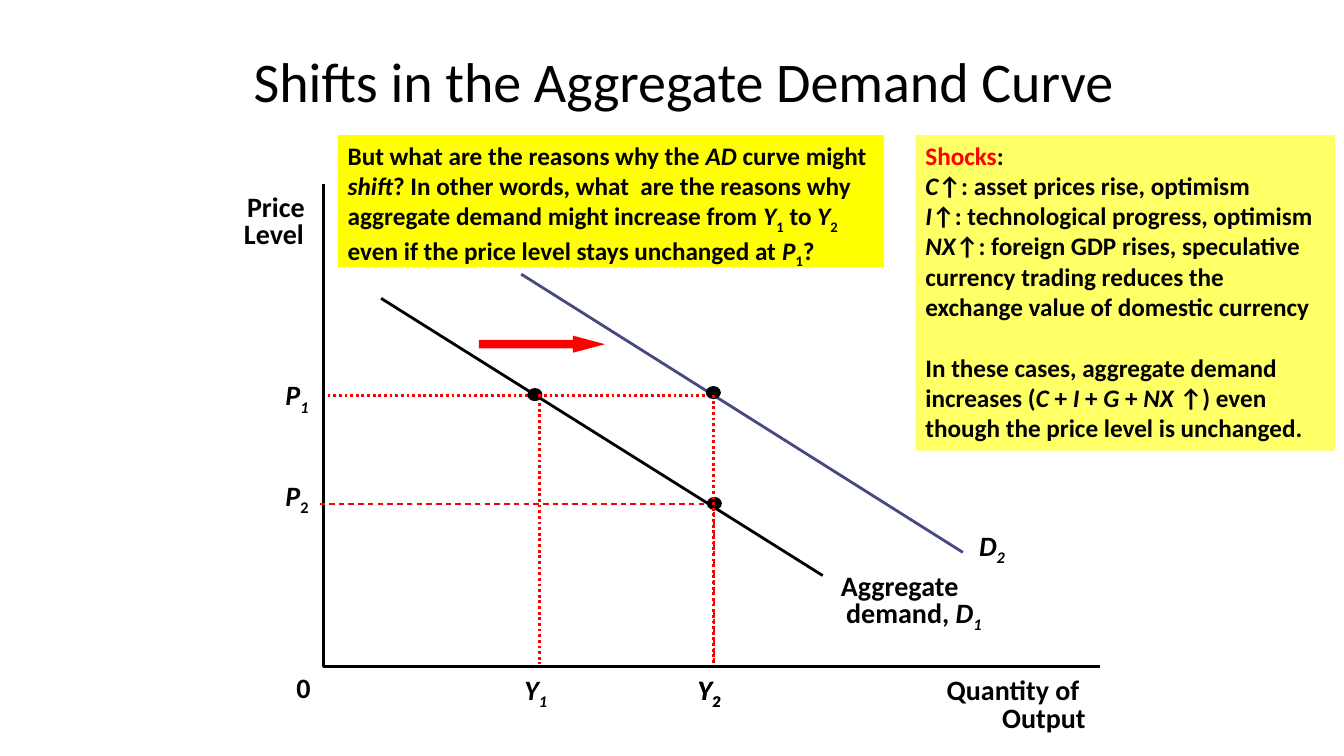
"""Build a slide on shifts in the aggregate demand curve."""
from lxml import etree
from pptx import Presentation
from pptx.dml.color import RGBColor
from pptx.enum.dml import MSO_LINE
from pptx.enum.shapes import MSO_CONNECTOR, MSO_SHAPE
from pptx.enum.text import MSO_ANCHOR, PP_ALIGN
from pptx.oxml.ns import qn
from pptx.util import Pt

PX = 9144
FONT = "Calibri"
BLACK = RGBColor(0x00, 0x00, 0x00)
RED = RGBColor(0xFF, 0x00, 0x00)
BLUE = RGBColor(0x47, 0x4A, 0x81)
YELLOW = RGBColor(0xFF, 0xFF, 0x00)
PALE_YELLOW = RGBColor(0xFF, 0xFF, 0x66)
SOLID, DASH, DOT = MSO_LINE.SOLID, MSO_LINE.DASH, MSO_LINE.ROUND_DOT
LEFT, CENTER = PP_ALIGN.LEFT, PP_ALIGN.CENTER
TOP, MIDDLE = MSO_ANCHOR.TOP, MSO_ANCHOR.MIDDLE
RECTANGLE, OVAL, RIGHT_ARROW = MSO_SHAPE.RECTANGLE, MSO_SHAPE.OVAL, MSO_SHAPE.RIGHT_ARROW
STRAIGHT = MSO_CONNECTOR.STRAIGHT

PLAIN, ITALIC, SUB, ITALIC_SUB, ALERT = "plain", "italic", "sub", "italic sub", "alert"

QUESTION = [[
    ("But what are the reasons why the ", PLAIN), ("AD", ITALIC),
    (" curve might ", PLAIN), ("shift", ITALIC),
    ("? In other words, what  are the reasons why aggregate demand might increase from ", PLAIN),
    ("Y", ITALIC), ("1", SUB), (" to ", PLAIN), ("Y", ITALIC), ("2", SUB),
    (" even if the price level stays unchanged at ", PLAIN),
    ("P", ITALIC), ("1", SUB), ("?", PLAIN),
]]
SHOCKS = [
    [("Shocks", ALERT), (":", PLAIN)],
    [("C", ITALIC), ("↑: asset prices rise, optimism", PLAIN)],
    [("I", ITALIC), ("↑: technological progress, optimism", PLAIN)],
    [("NX", ITALIC), ("↑: foreign GDP rises, speculative currency trading reduces "
                      "the exchange value of domestic currency", PLAIN)],
    [("In these cases, aggregate demand increases (", PLAIN), ("C", ITALIC), (" + ", PLAIN),
     ("I", ITALIC), (" + ", PLAIN), ("G", ITALIC), (" + ", PLAIN), ("NX ", ITALIC),
     ("↑) even though the price level is unchanged.", PLAIN)],
]


def add_spans(para, spans, size):
    """Fill a paragraph with bold spans in their styles."""
    for text, style in spans:
        span = para.add_run()
        span.text = text
        span.font.name, span.font.size, span.font.bold = FONT, Pt(size), True
        span.font.italic = ITALIC in style
        span.font.color.rgb = RED if style == ALERT else BLACK
        if SUB in style:
            span._r.get_or_add_rPr().set("baseline", "-25000")


def add_label(page, left, top, width, spans, align=LEFT):
    """Add a one-line label without margins."""
    box = page.shapes.add_textbox(left * PX, top * PX, width * PX, 34 * PX)
    frame = box.text_frame
    frame.word_wrap = False
    frame.margin_left = frame.margin_right = frame.margin_top = frame.margin_bottom = 0
    frame.paragraphs[0].alignment = align
    add_spans(frame.paragraphs[0], spans, 20)


def add_filled(page, kind, left, top, width, height, color):
    """Add a preset shape with a fill and no outline."""
    shape = page.shapes.add_shape(kind, left * PX, top * PX, width * PX, height * PX)
    shape.shadow.inherit = False
    shape.fill.solid()
    shape.fill.fore_color.rgb = color
    shape.line.fill.background()
    return shape


def add_note(page, left, width, height, color, paragraphs):
    """Add a coloured note and return its last paragraph."""
    frame = add_filled(page, RECTANGLE, left, 134, width, height, color).text_frame
    frame.word_wrap = True
    frame.vertical_anchor = TOP
    for index, spans in enumerate(paragraphs):
        para = frame.add_paragraph() if index else frame.paragraphs[0]
        para.alignment = LEFT
        add_spans(para, spans, 18)
    return para


def style_line(line, color, width, dash):
    """Set the colour, width and dash of a line."""
    line.color.rgb = color
    line.width = Pt(width)
    line.dash_style = dash


def add_line(page, start, end, color, width=2, dash=SOLID):
    """Add a straight line between two points."""
    line = page.shapes.add_connector(STRAIGHT, *(value * PX for value in start + end))
    style_line(line.line, color, width, dash)
    etree.SubElement(line._element.spPr, qn("a:effectLst"))


def add_bent_line(page, points, color, dash=SOLID):
    """Add an open outline through the points."""
    builder = page.shapes.build_freeform(*points[0], scale=PX)
    builder.add_line_segments(points[1:], close=False)
    shape = builder.convert_to_shape()
    shape.shadow.inherit = False
    shape.fill.background()
    style_line(shape.line, color, 2, dash)


def add_title(page, text):
    """Place and format the title."""
    title = page.shapes.title
    title.left, title.top, title.width, title.height = 67 * PX, 17 * PX, 1222 * PX, 133 * PX
    title.text_frame.text = text
    title.text_frame.vertical_anchor = MIDDLE
    para = title.text_frame.paragraphs[0]
    para.alignment, para.line_spacing = CENTER, 0.9
    font = para.runs[0].font
    font.name, font.size, font.color.rgb = FONT, Pt(40), BLACK


def main():
    """Build and save the slide."""
    deck = Presentation()
    deck.slide_width, deck.slide_height = 1333 * PX, 750 * PX
    page = deck.slides.add_slide(deck.slide_layouts[5])
    add_title(page, "Shifts in the Aggregate Demand Curve")

    add_bent_line(page, [(321, 183), (321, 661), (1091, 661)], BLACK)
    add_bent_line(page, [(325, 392), (535, 392), (535, 659)], RED, DOT)
    add_line(page, (378, 296), (816, 571), BLACK)
    add_line(page, (708, 500), (317, 500), RED, 1, DASH)
    add_line(page, (708, 658), (708, 500), RED, 1, DASH)
    add_line(page, (517, 272), (955, 548), BLUE)

    for left, top, width, text in (
        (939, 667, 133, "Quantity of"), (994, 695, 84, "Output"),
        (245, 188, 58, "Price"), (242, 215, 60, "Level"),
        (294, 665, 14, "0"), (834, 564, 118, "Aggregate"),
    ):
        add_label(page, left, top, width, [(text, PLAIN)])
    for left, top, letter, number, style in (
        (283, 375, "P", "1", ITALIC_SUB), (283, 475, "P", "2", SUB),
        (520, 667, "Y", "1", ITALIC_SUB), (692, 667, "Y", "2", SUB),
        (692, 667, "Y", "2", ITALIC_SUB), (971, 524, "D", "2", ITALIC_SUB),
    ):
        add_label(page, left, top, 28, [(letter, ITALIC), (number, style)])
    add_label(page, 838, 591, 137,
              [("demand, ", PLAIN), ("D", ITALIC), ("1", ITALIC_SUB)], CENTER)

    for left, top in ((523, 385), (701, 493), (700, 383)):
        add_filled(page, OVAL, left, top, 15, 13, BLACK)
    add_line(page, (534, 392), (700, 392), RED, 2, DOT)
    add_line(page, (708, 392), (708, 658), RED, 2, DOT)
    shift_arrow = add_filled(page, RIGHT_ARROW, 475, 333, 125, 17, RED)
    shift_arrow.adjustments[1] = 1.876

    add_note(page, 335, 542, 131, YELLOW, QUESTION)
    conclusion = add_note(page, 908, 416, 313, PALE_YELLOW, SHOCKS)
    conclusion.space_before = Pt(22)
    deck.save("out.pptx")


if __name__ == "__main__":
    main()
